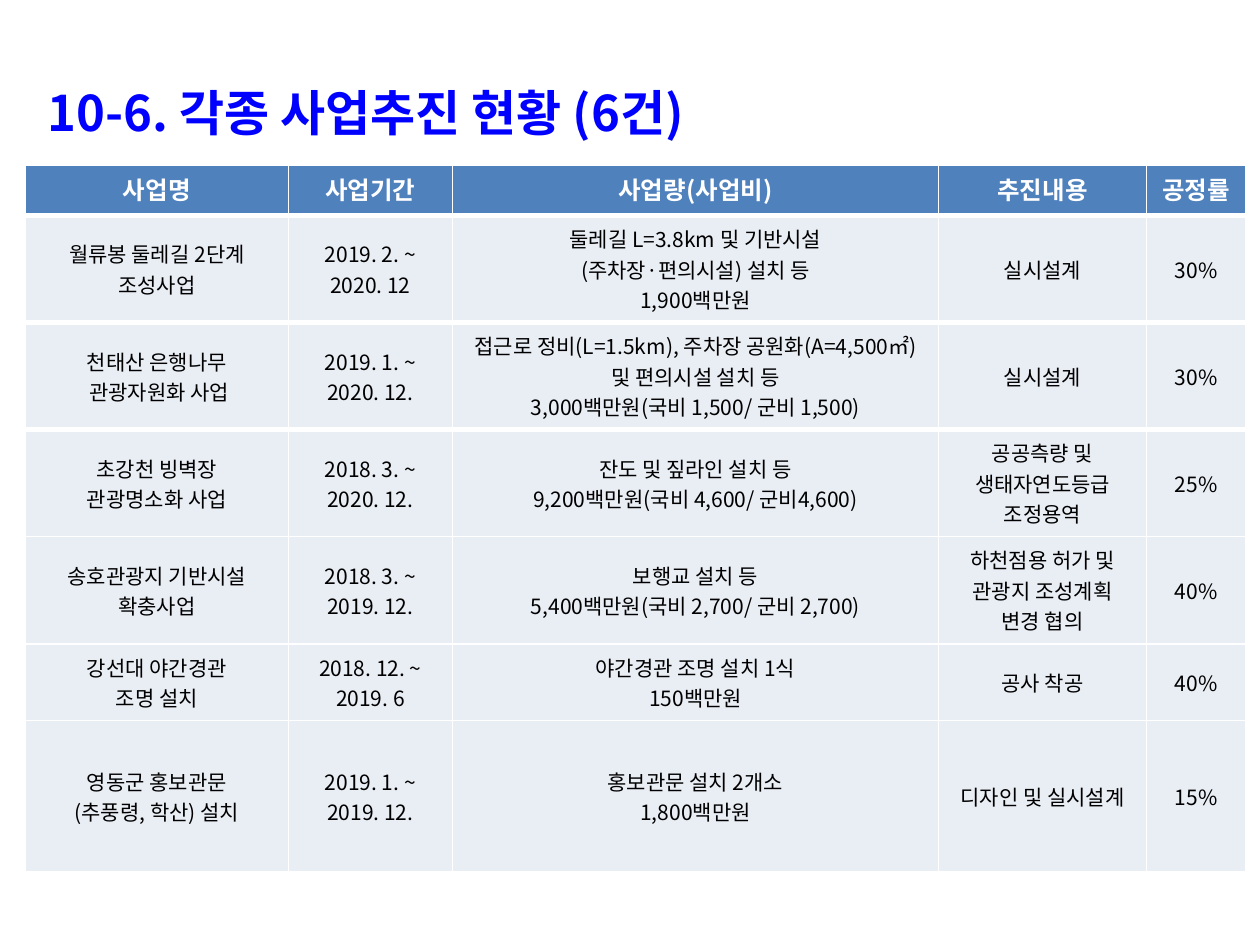
from lxml import etree
from pptx import Presentation
from pptx.dml.color import RGBColor
from pptx.enum.text import MSO_ANCHOR, PP_ALIGN
from pptx.oxml.ns import qn
from pptx.util import Pt

EMU_PER_PX = 9144
CENTER = PP_ALIGN.CENTER
LEFT = PP_ALIGN.LEFT
TOP = MSO_ANCHOR.TOP
MIDDLE = MSO_ANCHOR.MIDDLE

FONT = "Noto Sans CJK KR"
WHITE = "FFFFFF"
BLACK = "000000"
TITLE_BLUE = "0000FF"
HEADER_BLUE = "4F81BD"
BODY_FILL = "E9EDF4"

COLUMN_WIDTHS = [209, 130, 386, 165, 79]
ROW_HEIGHTS = [40, 85, 85, 85, 85, 61, 120]
RULE_WEIGHTS = [1, 3, 3, 3, 1, 1, 1, 1]
HEADERS = ["사업명", "사업기간", "사업량(사업비)", "추진내용", "공정률"]
PROJECTS = [
    ["월류봉 둘레길 2단계\n조성사업", "2019. 2. ~\n2020. 12",
     "둘레길 L=3.8km 및 기반시설\n(주차장·편의시설) 설치 등\n1,900백만원",
     "실시설계", "30%"],
    ["천태산 은행나무\n 관광자원화 사업", "2019. 1. ~\n2020. 12.",
     "접근로 정비(L=1.5km), 주차장 공원화(A=4,500㎡) 및 편의시설 설치 등\n"
     "3,000백만원(국비 1,500/ 군비 1,500)",
     "실시설계", "30%"],
    ["초강천 빙벽장\n관광명소화 사업", "2018. 3. ~\n2020. 12.",
     "잔도 및 짚라인 설치 등\n9,200백만원(국비 4,600/ 군비4,600)",
     "공공측량 및\n생태자연도등급\n조정용역", "25%"],
    ["송호관광지 기반시설\n확충사업", "2018. 3. ~\n2019. 12.",
     "보행교 설치 등\n5,400백만원(국비 2,700/ 군비 2,700)",
     "하천점용 허가 및 관광지 조성계획\n변경 협의", "40%"],
    ["강선대 야간경관\n조명 설치", "2018. 12. ~\n2019. 6",
     "야간경관 조명 설치 1식\n150백만원", "공사 착공", "40%"],
    ["영동군 홍보관문\n(추풍령, 학산) 설치", "2019. 1. ~\n2019. 12.",
     "홍보관문 설치 2개소\n1,800백만원", "디자인 및 실시설계", "15%"],
]


def px(length):
    return length * EMU_PER_PX


def color(value):
    return RGBColor.from_string(value)


def write_text(text_frame, text, size, text_color, bold, alignment):
    for index, line in enumerate(text.split("\n")):
        paragraph = text_frame.add_paragraph() if index else text_frame.paragraphs[0]
        paragraph.alignment = alignment
        run = paragraph.add_run()
        run.text = line
        run.font.size = Pt(size)
        run.font.bold = bold
        run.font.name = FONT
        run.font.color.rgb = color(text_color)
        east_asian = etree.SubElement(run.font._element, qn("a:ea"))
        east_asian.set("typeface", FONT)


def add_borders(cell, top_weight, bottom_weight):
    properties = cell._tc.get_or_add_tcPr()
    weights = {"a:lnL": 1, "a:lnR": 1, "a:lnT": top_weight, "a:lnB": bottom_weight}
    for tag, weight in weights.items():
        line = etree.SubElement(properties, qn(tag), w=str(Pt(weight)))
        fill = etree.SubElement(line, qn("a:solidFill"))
        etree.SubElement(fill, qn("a:srgbClr"), val=WHITE)


def add_title(slide, left, top, width, height):
    shape = slide.shapes.add_textbox(px(left), px(top), px(width), px(height))
    text_frame = shape.text_frame
    text_frame.word_wrap = False
    write_text(text_frame, "10-6. 각종 사업추진 현황 (6건)", 28, TITLE_BLUE, True, LEFT)
    paragraph = text_frame.paragraphs[0]
    paragraph.line_spacing = 1.5
    properties = paragraph._p.get_or_add_pPr()
    properties.set("marL", str(px(58)))
    properties.set("indent", str(px(-58)))


def add_project_table(slide, left, top, width, height):
    rows = [HEADERS] + PROJECTS
    shape = slide.shapes.add_table(
        len(rows), len(HEADERS), px(left), px(top), px(width), px(height))
    table = shape.table
    for column, column_width in zip(table.columns, COLUMN_WIDTHS):
        column.width = px(column_width)
    for row, row_height in zip(table.rows, ROW_HEIGHTS):
        row.height = px(row_height)
    for row_index, texts in enumerate(rows):
        is_header = row_index == 0
        for column_index, text in enumerate(texts):
            cell = table.cell(row_index, column_index)
            add_borders(cell, *RULE_WEIGHTS[row_index:row_index + 2])
            cell.fill.solid()
            cell.fill.fore_color.rgb = color(HEADER_BLUE if is_header else BODY_FILL)
            cell.vertical_anchor = TOP if is_header else MIDDLE
            write_text(cell.text_frame, text, 14 if is_header else 12,
                       WHITE if is_header else BLACK, is_header, CENTER)


def main():
    presentation = Presentation()
    presentation.slide_width = px(1000)
    presentation.slide_height = px(750)
    slide = presentation.slides.add_slide(presentation.slide_layouts[6])
    add_project_table(slide, 20, 131, sum(COLUMN_WIDTHS), sum(ROW_HEIGHTS))
    add_title(slide, 28, 37, 571, 70)
    presentation.save("out.pptx")


if __name__ == "__main__":
    main()
